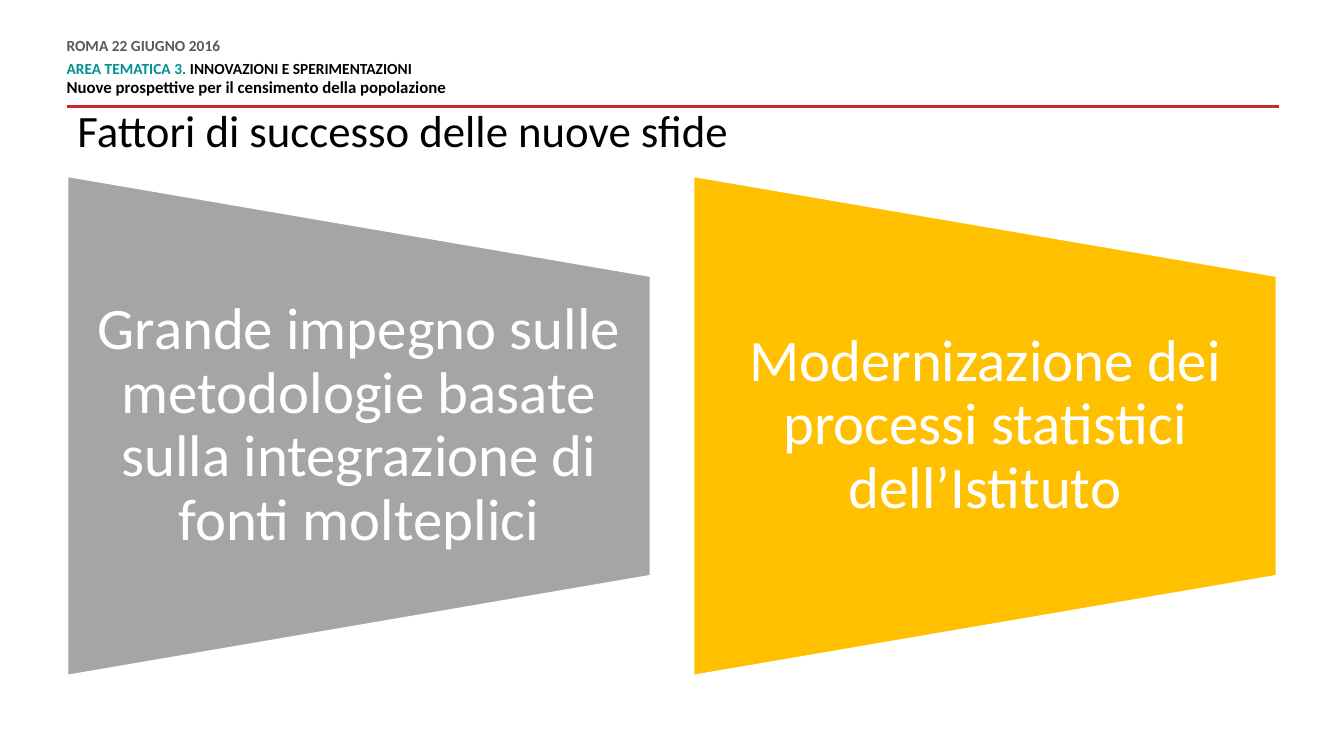
from lxml import etree
from pptx import Presentation
from pptx import util as u
from pptx.dml.color import RGBColor
from pptx.enum import shapes, text
from pptx.oxml.ns import qn

WHITE = RGBColor(0xFF, 0xFF, 0xFF)
BLACK = RGBColor(0x00, 0x00, 0x00)
DARK_GREY = RGBColor(0x59, 0x59, 0x59)
TEAL = RGBColor(0x00, 0x91, 0x90)
RED = RGBColor(0xC7, 0x2A, 0x31)
GREY = RGBColor(0xA5, 0xA5, 0xA5)
AMBER = RGBColor(0xFF, 0xC0, 0x00)

FONT = "Calibri"
SLIDE_W, SLIDE_H = 13.33, 7.5
MARGIN = 0.67
CONTENT_W = SLIDE_W - 2 * MARGIN

HEADER = [  # runs, size, space before, space after
    ([("ROMA 22 GIUGNO 2016", DARK_GREY)], 11, 0, 6),
    ([("AREA TEMATICA 3. ", TEAL), ("INNOVAZIONI E SPERIMENTAZIONI", BLACK)], 11, 0, 0),
    ([("Nuove prospettive per il censimento della popolazione", BLACK)], 12, 3, 6),
]
FACTORS = [
    ("Grande impegno sulle metodologie basate sulla integrazione di fonti molteplici", GREY),
    ("Modernizazione dei processi statistici dell’Istituto", AMBER),
]


def add_text_frame(s, x, y, w, h, inset_x=0.0, inset_y=0.0):
    """Add a wrapping text box and return its text frame."""
    tf = s.shapes.add_textbox(*map(u.Inches, (x, y, w, h))).text_frame
    tf.word_wrap = True
    tf.margin_left = tf.margin_right = u.Inches(inset_x)
    tf.margin_top = tf.margin_bottom = u.Inches(inset_y)
    return tf


def write_line(p, words, size, color):
    p.text = words
    p.line_spacing = 0.9
    p.font.name, p.font.size = FONT, u.Pt(size)
    p.font.color.rgb = color


def add_header(s, x, y, w, h):
    """Event lines above a red rule along the bottom of the box."""
    rule = s.shapes.add_connector(
        shapes.MSO_CONNECTOR.STRAIGHT, *map(u.Inches, (x + w, y + h, x, y + h)))
    rule.line.color.rgb = RED
    rule.line.width = u.Pt(2)
    etree.SubElement(rule._element.spPr, qn("a:effectLst"))

    tf = add_text_frame(s, x, y, 0.7 * w, 0.88 * h)
    for i, (runs, size, before, after) in enumerate(HEADER):
        p = tf.paragraphs[0] if i == 0 else tf.add_paragraph()
        p.line_spacing = u.Pt(10.8)
        p.space_before, p.space_after = u.Pt(before), u.Pt(after)
        p.font.name, p.font.size, p.font.bold = FONT, u.Pt(size), True
        for words, color in runs:
            r = p.add_run()
            r.text = words
            r.font.color.rgb = color


def add_title(s, x, y, w, h):
    tf = add_text_frame(s, x, y, w, h, 0.1, 0.05)
    write_line(tf.paragraphs[0], "Fattori di successo delle nuove sfide", 32, BLACK)


def add_factor(s, x, y, w, h, words, color):
    """Trapezoid narrowing to the right, with centred words on it."""
    # The preset narrows downwards, so it is laid on its side about the box centre.
    sp = s.shapes.add_shape(
        shapes.MSO_SHAPE.FLOWCHART_MANUAL_OPERATION,
        *map(u.Inches, (x + (w - h) / 2, y + (h - w) / 2, h, w)))
    sp.rotation = 270
    sp.shadow.inherit = False
    sp.fill.solid()
    sp.fill.fore_color.rgb = color
    sp.line.color.rgb = WHITE
    sp.line.width = u.Pt(1)

    tf = add_text_frame(s, x, y + 0.2 * h, w, 0.6 * h, 0.29)
    tf.vertical_anchor = text.MSO_ANCHOR.MIDDLE
    p = tf.paragraphs[0]
    write_line(p, words, 42, WHITE)
    p.alignment = text.PP_ALIGN.CENTER


def add_factors(s, x, y, w, h, gap):
    col_w = (w - gap * (len(FACTORS) - 1)) / len(FACTORS)
    for i, (words, color) in enumerate(FACTORS):
        add_factor(s, x + i * (col_w + gap), y, col_w, h, words, color)


def main():
    prs = Presentation()
    prs.slide_width, prs.slide_height = u.Inches(SLIDE_W), u.Inches(SLIDE_H)
    s = prs.slides.add_slide(prs.slide_layouts[6])
    add_header(s, 0.66, 0.39, 12.03, 0.67)
    add_title(s, MARGIN, 1.03, CONTENT_W, 0.6)
    add_factors(s, MARGIN, 1.75, CONTENT_W, 4.95, 0.43)
    prs.save("out.pptx")


if __name__ == "__main__":
    main()
